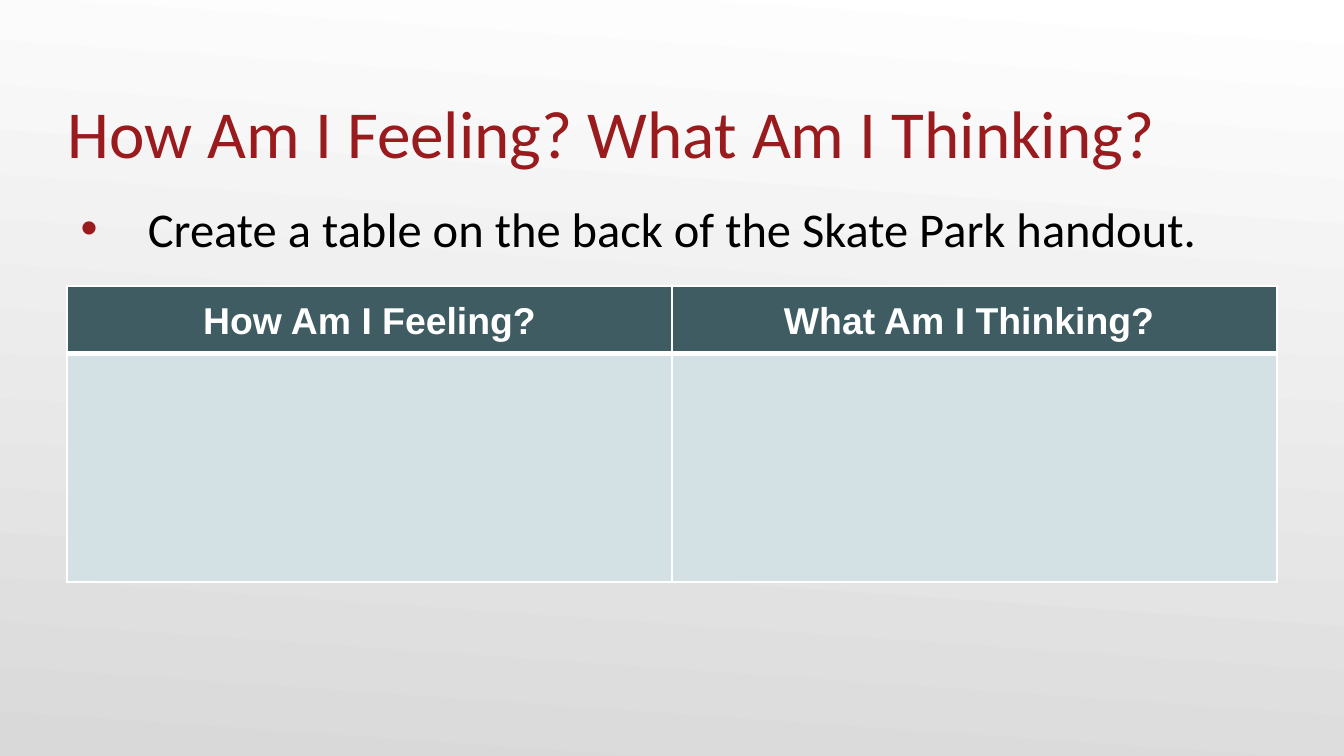
from lxml.etree import SubElement
from pptx import Presentation
from pptx.dml.color import RGBColor
from pptx.enum.text import MSO_ANCHOR, MSO_AUTO_SIZE, PP_ALIGN
from pptx.oxml.ns import qn
from pptx.util import Inches, Pt

RED, TEAL, PALE, WHITE = "991B1E", "3E5C61", "D4E1E4", "FFFFFF"


def color(value):
    return RGBColor.from_string(value)


def style_font(paragraph, name, size, value, bold=False):
    font = paragraph.font
    font.name, font.size, font.bold = name, Pt(size), bold
    font.color.rgb = color(value)


def fill_placeholder(shape, box, text, anchor, side_inset, bottom_inset):
    shape.left, shape.top, shape.width, shape.height = map(Inches, box)
    frame = shape.text_frame
    frame.text = text
    frame.word_wrap = True
    frame.auto_size = MSO_AUTO_SIZE.NONE
    frame.vertical_anchor = anchor
    frame.margin_left = frame.margin_right = Inches(side_inset)
    frame.margin_top, frame.margin_bottom = Inches(0.05), Inches(bottom_inset)
    paragraph = frame.paragraphs[0]
    paragraph.space_before = Pt(0)
    return paragraph


def set_background(slide):
    fill = slide.background.fill
    fill.gradient()
    fill.gradient_angle = 266
    for stop, position, value in zip(fill.gradient_stops, (0, 1), (WHITE, "D9D9D9")):
        stop.position = position
        stop.color.rgb = color(value)


def add_title(slide, box, text):
    paragraph = fill_placeholder(slide.shapes.title, box, text, MSO_ANCHOR.BOTTOM, 0, 0)
    paragraph.alignment = PP_ALIGN.LEFT
    style_font(paragraph, "Calibri", 36, RED)


def add_instruction(slide, box, text):
    paragraph = fill_placeholder(slide.placeholders[1], box, text, MSO_ANCHOR.TOP, 0.1, 0.05)
    paragraph.space_after = Pt(6)
    # Red bullet with a hanging indent
    properties = paragraph._p.get_or_add_pPr()
    properties.set("marL", str(Inches(0.5)))
    properties.set("indent", str(-Inches(0.5)))
    bullet_color = SubElement(properties, qn("a:buClr"))
    SubElement(bullet_color, qn("a:srgbClr"), val=RED)
    SubElement(properties, qn("a:buFont"), typeface="Arial")
    SubElement(properties, qn("a:buChar"), char="•")
    style_font(paragraph, "Calibri", 26, "000000")


def style_cell(cell, fill, top_width, bottom_width):
    cell.fill.solid()
    cell.fill.fore_color.rgb = color(fill)
    properties = cell._tc.get_or_add_tcPr()
    widths = {"lnL": 1, "lnR": 1, "lnT": top_width, "lnB": bottom_width}
    # Borders come before the fill in the cell properties
    for position, (side, width) in enumerate(widths.items()):
        line = SubElement(properties, qn(f"a:{side}"), w=str(Pt(width)))
        SubElement(SubElement(line, qn("a:solidFill")), qn("a:srgbClr"), val=WHITE)
        properties.insert(position, line)


def add_response_table(slide, box, headers, row_heights):
    table = slide.shapes.add_table(2, len(headers), *map(Inches, box)).table
    for row, row_height in zip(table.rows, row_heights):
        row.height = Inches(row_height)
    for column, header in enumerate(headers):
        # Header cell, with a heavy rule below
        cell = table.cell(0, column)
        style_cell(cell, TEAL, 1, 3)
        cell.text = header
        cell.vertical_anchor = MSO_ANCHOR.MIDDLE
        cell.margin_left = cell.margin_right = Inches(0.06)
        cell.margin_top = cell.margin_bottom = Inches(0.06)
        paragraph = cell.text_frame.paragraphs[0]
        paragraph.alignment = PP_ALIGN.CENTER
        paragraph.line_spacing = 1.07
        style_font(paragraph, "Arial", 20, WHITE, bold=True)
        # Empty answer cell
        style_cell(table.cell(1, column), PALE, 3, 1)


def main():
    presentation = Presentation()
    # Widescreen, 16:9
    presentation.slide_width = Inches(10)
    presentation.slide_height = Inches(10 * 9 / 16)
    slide = presentation.slides.add_slide(presentation.slide_layouts[1])
    set_background(slide)
    add_title(slide, (0.5, 0.34, 9, 0.94), "How Am I Feeling? What Am I Thinking?")
    add_instruction(slide, (0.5, 1.43, 9, 3.76),
                    "Create a table on the back of the Skate Park handout.")
    add_response_table(slide, (0.5, 2.13, 9, 2.2),
                       ("How Am I Feeling?", "What Am I Thinking? "), (0.5, 1.7))
    presentation.save("out.pptx")


if __name__ == "__main__":
    main()
